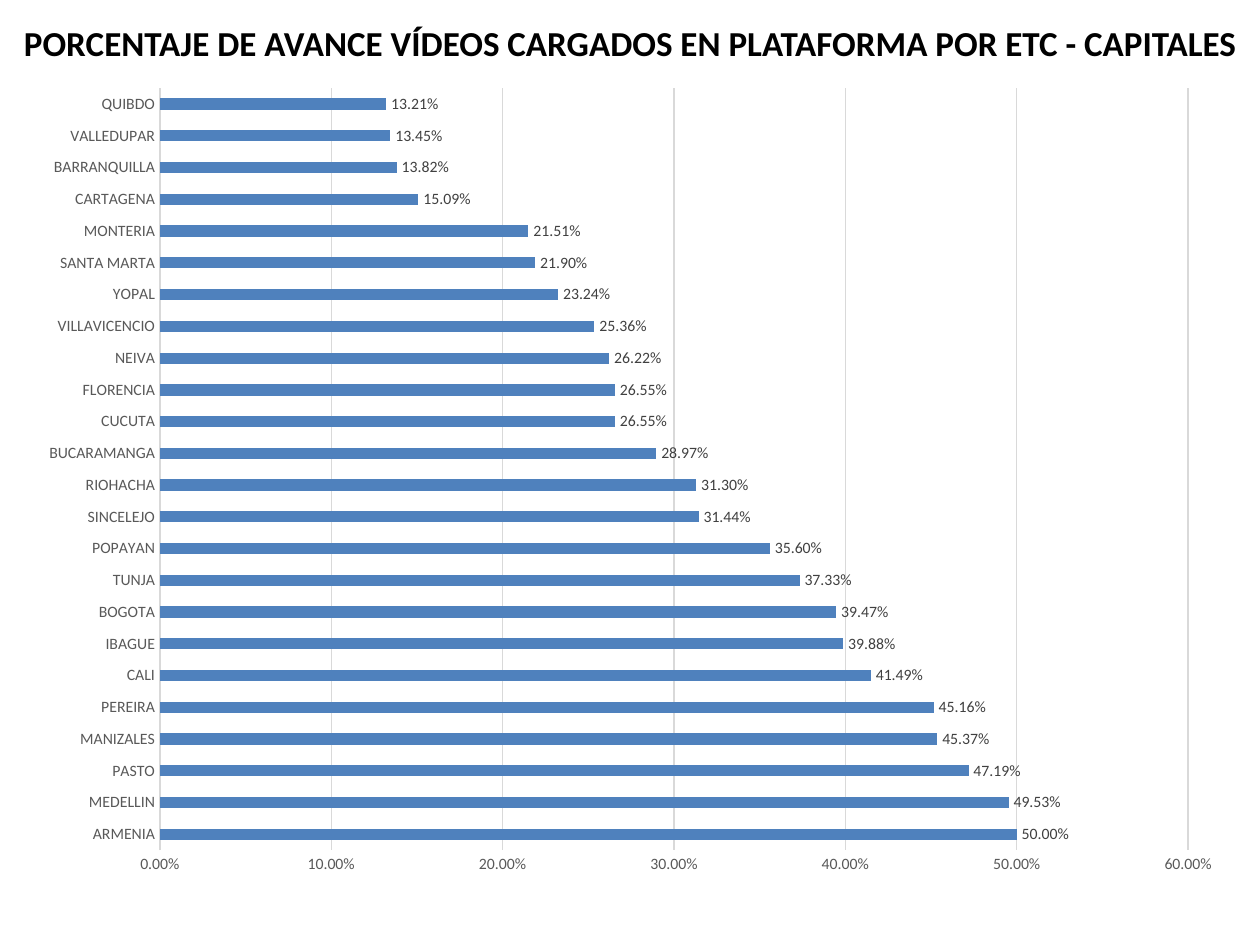
from pptx import Presentation
from pptx.chart.data import CategoryChartData
from pptx.dml.color import RGBColor
from pptx.enum.chart import XL_CHART_TYPE as Kind, XL_LABEL_POSITION as Spot, XL_TICK_MARK as Tick
from pptx.enum.shapes import MSO_SHAPE as Shape
from pptx.enum.text import MSO_ANCHOR as Anchor, PP_ALIGN as Align
from pptx.util import Emu, Pt

TITLE = "PORCENTAJE DE AVANCE VÍDEOS CARGADOS EN PLATAFORMA POR ETC - CAPITALES"
RATES = [
    ("ARMENIA", 0.5), ("MEDELLIN", 0.4953), ("PASTO", 0.4719),
    ("MANIZALES", 0.4537), ("PEREIRA", 0.4516), ("CALI", 0.4149),
    ("IBAGUE", 0.3988), ("BOGOTA", 0.3947), ("TUNJA", 0.3733),
    ("POPAYAN", 0.356), ("SINCELEJO", 0.3144), ("RIOHACHA", 0.313),
    ("BUCARAMANGA", 0.2897), ("CUCUTA", 0.2655), ("FLORENCIA", 0.2655),
    ("NEIVA", 0.2622), ("VILLAVICENCIO", 0.2536), ("YOPAL", 0.2324),
    ("SANTA MARTA", 0.219), ("MONTERIA", 0.2151), ("CARTAGENA", 0.1509),
    ("BARRANQUILLA", 0.1382), ("VALLEDUPAR", 0.1345), ("QUIBDO", 0.1321),
]
FORMAT = "0.00%"
FACE = "Calibri"
GRAY = "D9D9D9"
SCALE = 914400 / 126


def px(*nums):
    return [Emu(round(n * SCALE)) for n in nums]


def color(code):
    return RGBColor.from_string(code)


def style(font, size, code, bold=False):
    font.name, font.size, font.bold = FACE, Pt(size), bold
    font.color.rgb = color(code)


def stroke(line):
    line.color.rgb = color(GRAY)
    line.width = Pt(0.75)


def write(frame, text, size=20, code="000000", bold=False, align=Align.CENTER):
    frame.word_wrap = True
    frame.vertical_anchor = Anchor.MIDDLE
    para = frame.paragraphs[0]
    para.alignment = align
    run = para.add_run()
    run.text = text
    style(run.font, size, code, bold)


def add_title(slide):
    box = slide.shapes.add_shape(Shape.ROUND_2_DIAG_RECTANGLE, *px(1, 10, 1259, 66))
    box.shadow.inherit = False
    box.fill.solid()
    box.fill.fore_color.rgb = color("FFFFFF")
    box.line.fill.background()
    write(box.text_frame, TITLE, bold=True)


def add_bars(slide):
    data = CategoryChartData(number_format=FORMAT)
    data.categories = [city for city, rate in RATES]
    data.add_series("Series 1", [rate for city, rate in RATES])
    chart = slide.shapes.add_chart(Kind.BAR_CLUSTERED, *px(25, 72, 1211, 818), data).chart
    chart.has_title = chart.has_legend = False
    style(chart.font, 10, "000000")

    cats, vals = chart.category_axis, chart.value_axis
    for axis in (cats, vals):
        axis.major_tick_mark = axis.minor_tick_mark = Tick.NONE
        style(axis.tick_labels.font, 9, "595959")
    stroke(cats.format.line)
    vals.format.line.fill.background()
    vals.minimum_scale, vals.maximum_scale, vals.major_unit = 0, 0.6, 0.1
    vals.has_major_gridlines = True
    stroke(vals.major_gridlines.format.line)
    vals.tick_labels.number_format = FORMAT
    vals.tick_labels.number_format_is_linked = False

    plot = chart.plots[0]
    plot.gap_width = 182
    plot.vary_by_categories = False
    bars = plot.series[0]
    bars.format.fill.solid()
    bars.format.fill.fore_color.rgb = color("4F81BD")
    tags = bars.data_labels
    tags.show_value = True
    tags.position = Spot.OUTSIDE_END
    tags.number_format = FORMAT
    tags.number_format_is_linked = False
    style(tags.font, 9, "404040")


def main():
    deck = Presentation()
    deck.slide_width, deck.slide_height = px(1260, 945)
    slide = deck.slides.add_slide(deck.slide_layouts[6])
    add_title(slide)
    add_bars(slide)
    deck.save("out.pptx")


if __name__ == "__main__":
    main()
